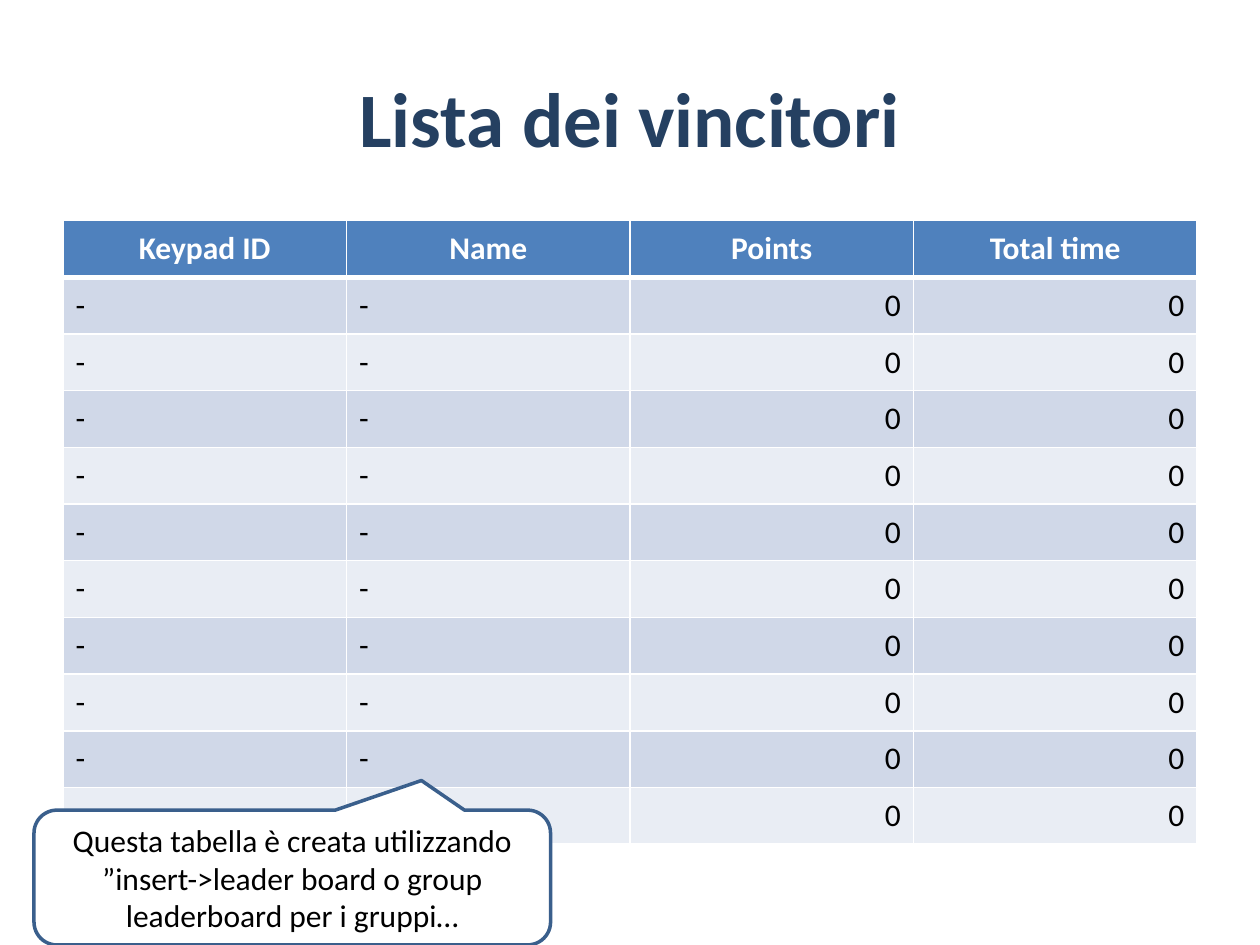
"""Builds the winners' leaderboard slide with its explanatory callout."""
import pptx
import pptx.util
import pptx.dml.color
import pptx.enum.shapes
import pptx.enum.text
import pptx.oxml
import pptx.oxml.ns

Inches = pptx.util.Inches
ALIGN = pptx.enum.text.PP_ALIGN

COLORS = {
    "title": "254061",
    "header": "4F81BD",
    "odd": "D0D8E8",
    "even": "E9EDF4",
    "white": "FFFFFF",
    "text": "000000",
    "outline": "3A5F8C",
}
FONT = "Calibri"
TITLE = "Lista dei vincitori"
HEADERS = ["Keypad ID", "Name", "Points", "Total time"]
WINNERS = [["-", "-", "0", "0"]] * 10
WINNER_ALIGNS = [ALIGN.LEFT, ALIGN.LEFT, ALIGN.RIGHT, ALIGN.RIGHT]
NOTE = "Questa tabella è creata utilizzando ”insert->leader board o group leaderboard per i gruppi…"
NOTE_ADJUSTMENTS = (0.25, -0.72, 0.17)
COLUMN_WIDTH, ROW_HEIGHT = 2.25, 0.45


def rgb(name):
    return pptx.dml.color.RGBColor.from_string(COLORS[name])


def write(frame, text, size, color, align, bold=False):
    frame.word_wrap = True
    paragraph = frame.paragraphs[0]
    paragraph.text = text
    paragraph.alignment = align
    font = paragraph.font
    font.name, font.size, font.bold = FONT, pptx.util.Pt(size), bold
    font.color.rgb = rgb(color)


def add_borders(cell, top, bottom):
    for side, points in (("L", 1), ("R", 1), ("T", top), ("B", bottom)):
        border = pptx.oxml.parse_xml(
            f'<a:ln{side} {pptx.oxml.ns.nsdecls("a")} w="{pptx.util.Pt(points)}"><a:solidFill>'
            f'<a:srgbClr val="{COLORS["white"]}"/></a:solidFill></a:ln{side}>'
        )
        cell._tc.get_or_add_tcPr().append(border)


def add_title(slide):
    title = slide.shapes.add_textbox(Inches(0.5), Inches(0.3), Inches(9), Inches(1.25))
    write(title.text_frame, TITLE, 44, "title", ALIGN.CENTER, bold=True)
    title.text_frame.vertical_anchor = pptx.enum.text.MSO_ANCHOR.MIDDLE


def add_leaderboard(slide):
    rows = [HEADERS] + WINNERS
    leaderboard = slide.shapes.add_table(
        len(rows), len(HEADERS), Inches(0.5), Inches(1.75),
        Inches(COLUMN_WIDTH * len(HEADERS)), Inches(ROW_HEIGHT * len(rows)),
    ).table
    for column in leaderboard.columns:
        column.width = Inches(COLUMN_WIDTH)
    for r, values in enumerate(rows):
        leaderboard.rows[r].height = Inches(ROW_HEIGHT)
        is_header = r == 0
        fill = "header" if is_header else "odd" if r % 2 else "even"
        for c, value in enumerate(values):
            cell = leaderboard.cell(r, c)
            add_borders(cell, top=3 if r == 1 else 1, bottom=3 if is_header else 1)
            cell.fill.solid()
            cell.fill.fore_color.rgb = rgb(fill)
            cell.vertical_anchor = pptx.enum.text.MSO_ANCHOR.MIDDLE
            write(
                cell.text_frame, value, 18,
                "white" if is_header else "text",
                ALIGN.CENTER if is_header else WINNER_ALIGNS[c],
                bold=is_header,
            )


def add_note(slide):
    note = slide.shapes.add_shape(
        pptx.enum.shapes.MSO_SHAPE.ROUNDED_RECTANGULAR_CALLOUT,
        Inches(0.27), Inches(6.43), Inches(4.1), Inches(1.07),
    )
    for i, adjustment in enumerate(NOTE_ADJUSTMENTS):
        note.adjustments[i] = adjustment
    note.shadow.inherit = False
    note.fill.solid()
    note.fill.fore_color.rgb = rgb("white")
    note.line.color.rgb = rgb("outline")
    note.line.width = pptx.util.Pt(2)
    write(note.text_frame, NOTE, 18, "text", ALIGN.CENTER)
    note.text_frame.vertical_anchor = pptx.enum.text.MSO_ANCHOR.MIDDLE


def main():
    presentation = pptx.Presentation()
    presentation.slide_width, presentation.slide_height = Inches(10), Inches(7.5)
    slide = presentation.slides.add_slide(presentation.slide_layouts[6])
    add_title(slide)
    add_leaderboard(slide)
    add_note(slide)
    presentation.save("out.pptx")


if __name__ == "__main__":
    main()
